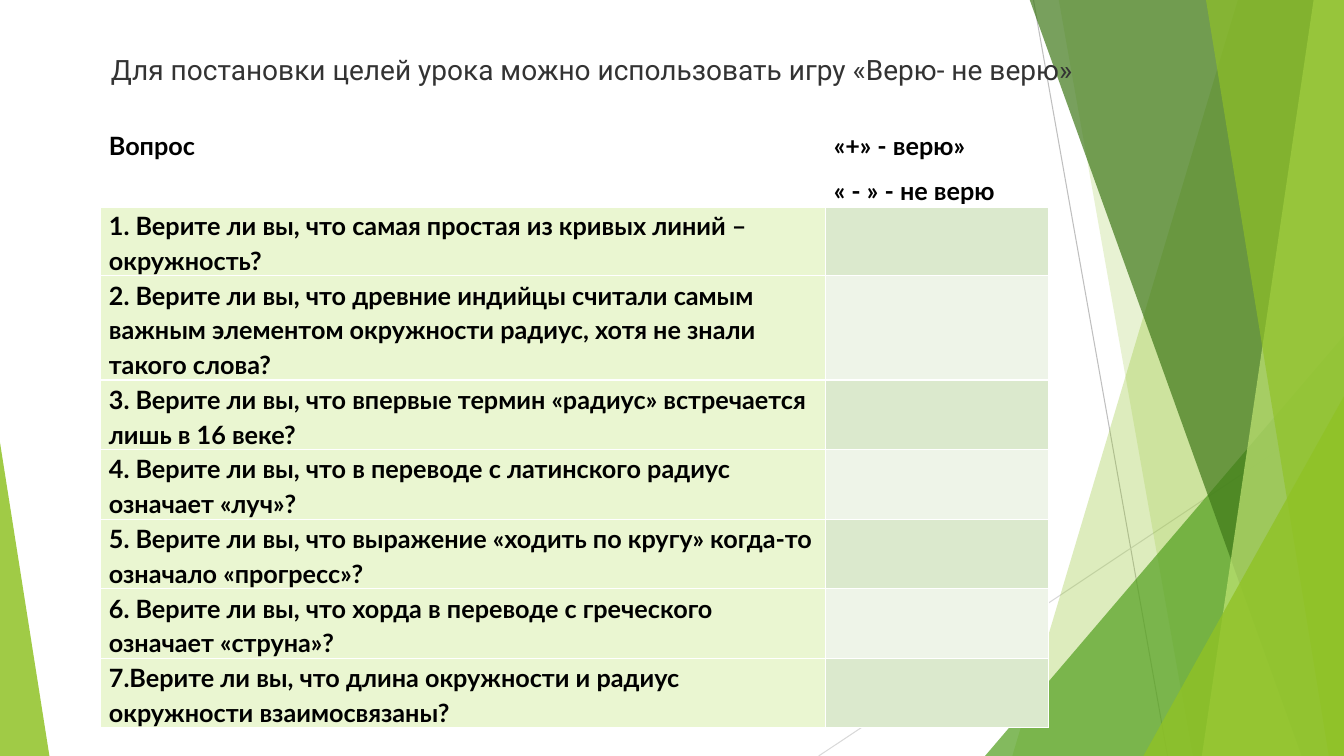
from typing import NamedTuple

from lxml import etree
from pptx import Presentation
from pptx.dml.color import RGBColor
from pptx.enum.shapes import MSO_CONNECTOR, MSO_SHAPE
from pptx.enum.text import MSO_ANCHOR, PP_ALIGN
from pptx.oxml.ns import qn
from pptx.util import Inches, Pt

STRAIGHT = MSO_CONNECTOR.STRAIGHT
TRIANGLE = MSO_SHAPE.ISOSCELES_TRIANGLE
LEFT = PP_ALIGN.LEFT
TOP = MSO_ANCHOR.TOP

COLORS = {
    "white": "FFFFFF", "black": "000000", "title": "333333",
    "gray": "BFBFBF", "light_gray": "D9D9D9",
    "lime": "90C226", "green": "54A021", "dark_green": "3F7819", "pale_lime": "C0E474",
    "question": "EAF6D1", "odd": "DBE9CD", "even": "EEF4E8",
}
WIDTH, HEIGHT = 13.33, 7.5
BAND_TOP = -0.01


class Ray(NamedTuple):
    x1: float
    y1: float
    x2: float
    y2: float
    color: str


class Band(NamedTuple):
    top_x: float
    bottom_x: float
    color: str
    opacity: int


class Wedge(NamedTuple):
    left: float
    top: float
    width: float
    apex: float
    color: str
    opacity: int


RAYS = [
    Ray(10.25, 0, 11.58, HEIGHT, "gray"),
    Ray(WIDTH, 4.03, 8.12, HEIGHT, "light_gray"),
]
FACETS = [
    Band(12.28, 10.04, "lime", 30),
    Band(10.5, 11.83, "lime", 20),
    Wedge(9.77, 3.33, 3.56, 1, "green", 72),
    Band(10.21, 12.91, "dark_green", 70),
    Band(13.03, 11.92, "pale_lime", 70),
    Band(11.96, 13.18, "lime", 65),
    Wedge(11.34, 3.93, 1.99, 1, "lime", 80),
    Wedge(0, 4.39, 0.49, 0, "lime", 85),
]
TITLE = "Для постановки целей урока можно использовать игру «Верю- не верю»"
HEADERS = [["Вопрос"], ["«+» - верю»", "« - » - не верю"]]
QUESTIONS = [
    "1. Верите ли вы, что самая простая из кривых линий – окружность?",
    "2. Верите ли вы, что древние индийцы считали самым важным элементом окружности радиус, хотя не знали такого слова?",
    "3. Верите ли вы, что впервые термин «радиус» встречается лишь в 16 веке?",
    "4. Верите ли вы, что в переводе с латинского радиус означает «луч»?",
    "5. Верите ли вы, что выражение «ходить по кругу» когда-то означало «прогресс»?",
    "6. Верите ли вы, что хорда в переводе с греческого означает «струна»?",
    "7.Верите ли вы, что длина окружности и радиус окружности взаимосвязаны?",
]
COLUMN_WIDTHS = [7.19, 2.21]
ROW_HEIGHTS = [0.79, 0.68, 1.02] + [0.68] * 5


def rgb(name: str) -> RGBColor:
    return RGBColor.from_string(COLORS[name])


def add_ray(s, ray: Ray) -> None:
    line = s.shapes.add_connector(
        STRAIGHT, Inches(ray.x1), Inches(ray.y1), Inches(ray.x2), Inches(ray.y2))
    line.line.color.rgb = rgb(ray.color)
    line.line.width = Pt(0.75)
    etree.SubElement(line.element.spPr, qn("a:effectLst"))


def paint(sp, color: str, opacity: int) -> None:
    sp.shadow.inherit = False
    sp.line.fill.background()
    sp.fill.solid()
    sp.fill.fore_color.rgb = rgb(color)
    srgb = sp.element.spPr.find(qn("a:solidFill")).find(qn("a:srgbClr"))
    etree.SubElement(srgb, qn("a:alpha"), val=str(opacity * 1000))


def add_band(s, band: Band) -> None:
    corners = [(WIDTH, BAND_TOP), (WIDTH, HEIGHT), (band.bottom_x, HEIGHT)]
    builder = s.shapes.build_freeform(Inches(band.top_x), Inches(BAND_TOP))
    builder.add_line_segments([(Inches(x), Inches(y)) for x, y in corners], close=True)
    paint(builder.convert_to_shape(), band.color, band.opacity)


def add_wedge(s, wedge: Wedge) -> None:
    sp = s.shapes.add_shape(
        TRIANGLE, Inches(wedge.left), Inches(wedge.top),
        Inches(wedge.width), Inches(HEIGHT - wedge.top))
    sp.adjustments[0] = wedge.apex
    paint(sp, wedge.color, wedge.opacity)


def add_run(p, text: str, font: str, size: int, color: str, bold: bool) -> None:
    r = p.add_run()
    r.text = text
    r.font.name = font
    r.font.size = Pt(size)
    r.font.bold = bold
    r.font.color.rgb = rgb(color)


def add_borders(cell, bottom: float) -> None:
    props = cell._tc.get_or_add_tcPr()
    widths = {"a:lnL": 1, "a:lnR": 1, "a:lnT": 1, "a:lnB": bottom}
    for i, (tag, width) in enumerate(widths.items()):
        ln = etree.Element(qn(tag), w=str(Pt(width)))
        fill = etree.SubElement(ln, qn("a:solidFill"))
        etree.SubElement(fill, qn("a:srgbClr"), val=COLORS["white"])
        props.insert(i, ln)


def fill_cell(cell, lines: list[str], fill: str, bottom: float) -> None:
    cell.fill.solid()
    cell.fill.fore_color.rgb = rgb(fill)
    add_borders(cell, bottom)
    cell.margin_left = cell.margin_right = Inches(0.08)
    cell.margin_top = cell.margin_bottom = 0
    tf = cell.text_frame
    for i, line in enumerate(lines):
        p = tf.add_paragraph() if i else tf.paragraphs[0]
        p.line_spacing = 1.15
        p.space_after = Pt(7.5)
        add_run(p, line, "Lato", 18, "black", True)


def add_questions(s) -> None:
    table = s.shapes.add_table(
        len(ROW_HEIGHTS), len(COLUMN_WIDTHS), Inches(1), Inches(1.25),
        Inches(sum(COLUMN_WIDTHS)), Inches(sum(ROW_HEIGHTS))).table
    for column, width in zip(table.columns, COLUMN_WIDTHS):
        column.width = Inches(width)
    for row, height in zip(table.rows, ROW_HEIGHTS):
        row.height = Inches(height)
    for i, lines in enumerate(HEADERS):
        fill_cell(table.cell(0, i), lines, "white", 3)
    for i, question in enumerate(QUESTIONS, 1):
        fill_cell(table.cell(i, 0), [question], "question", 1)
        fill_cell(table.cell(i, 1), [], "odd" if i % 2 else "even", 1)


def set_title(s) -> None:
    sp = s.shapes.title
    sp.left, sp.top, sp.width, sp.height = map(Inches, (1, 0.47, 18.64, 0.74))
    tf = sp.text_frame
    tf.word_wrap = True
    tf.vertical_anchor = TOP
    p = tf.paragraphs[0]
    p.alignment = LEFT
    add_run(p, TITLE, "Roboto", 20, "title", False)
    sp.element.getparent().append(sp.element)


def main() -> None:
    prs = Presentation()
    prs.slide_width, prs.slide_height = Inches(WIDTH), Inches(HEIGHT)
    s = prs.slides.add_slide(prs.slide_layouts[5])
    for ray in RAYS:
        add_ray(s, ray)
    for facet in FACETS:
        if isinstance(facet, Band):
            add_band(s, facet)
        else:
            add_wedge(s, facet)
    add_questions(s)
    set_title(s)
    prs.save("out.pptx")


if __name__ == "__main__":
    main()
